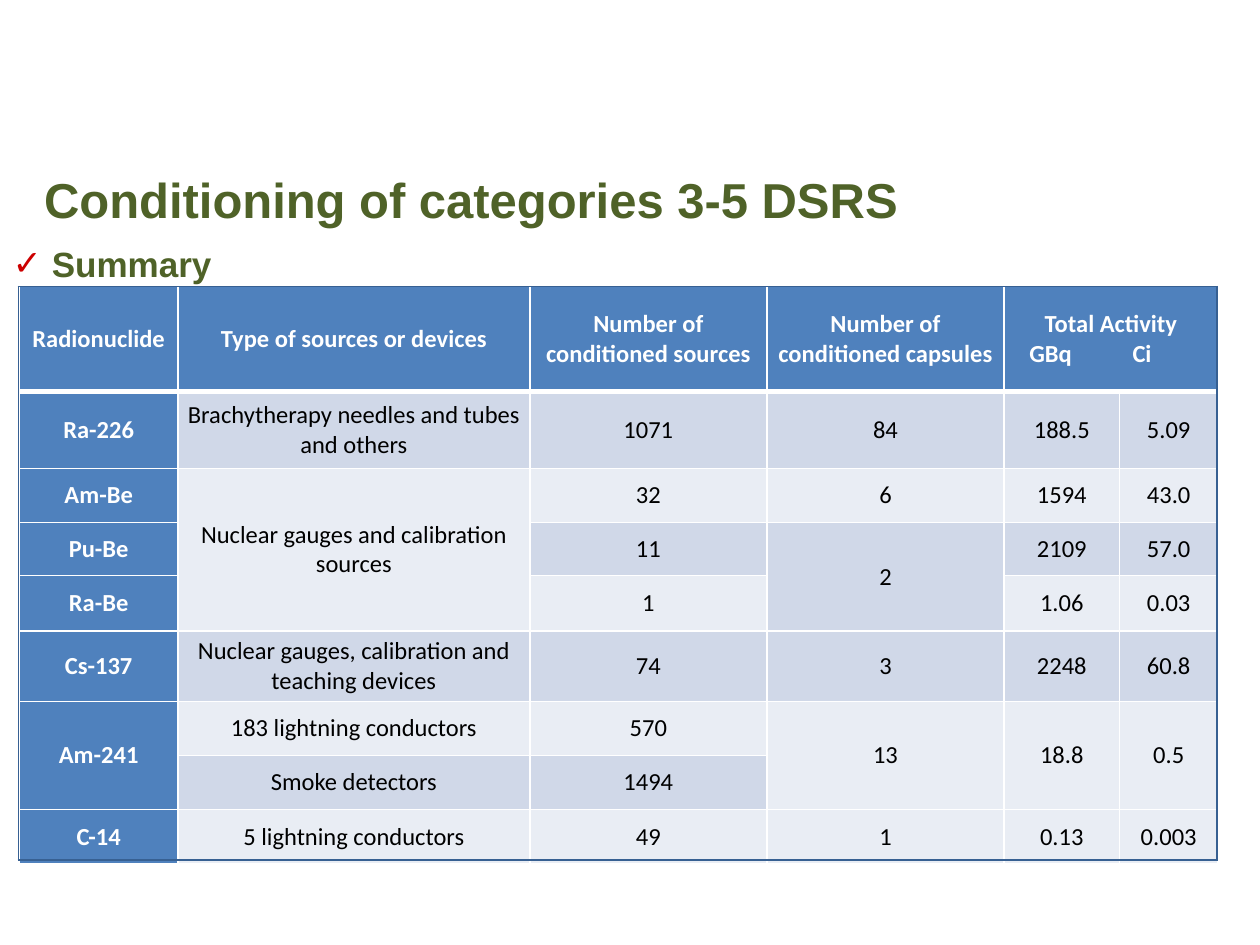
from typing import NamedTuple

from lxml.etree import SubElement
from pptx import Presentation
from pptx.dml.color import RGBColor
from pptx.enum.text import MSO_ANCHOR, MSO_AUTO_SIZE, PP_ALIGN
from pptx.oxml.ns import qn
from pptx.util import Cm, Pt

COLORS = {
    "green": "4F6228", "red": "CC0000", "blue": "4F81BD", "frame": "376092",
    "dark": "D0D8E8", "light": "E9EDF4", "white": "FFFFFF", "black": "000000",
}


class Box(NamedTuple):
    left: float
    top: float
    width: float
    height: float


class Span(NamedTuple):
    row: int
    col: int
    rows: int
    cols: int


TITLE = Box(0.89, 3.41, 18.06, 1.19)
BODY = Box(0, 4.6, 25.4, 1.19)
GRID = Box(0.39, 5.78, 24.16, 11.63)
FRAME = Box(0.37, 5.78, 24.16, 11.56)
COLS = [3.2, 7.09, 4.78, 4.78, 2.33, 1.98]
ROWS = [2.11, 1.55, 1.09, 1.07, 1.12, 1.42, 1.09, 1.09, 1.09]

DATA = [
    ["Radionuclide", "Type of sources or devices", "Number of conditioned sources",
     "Number of conditioned capsules", "Total Activity\nGBq\tCi", None],
    ["Ra-226", "Brachytherapy needles and tubes and others", "1071", "84", "188.5", "5.09"],
    ["Am-Be", "Nuclear gauges and calibration sources", "32", "6", "1594", "43.0"],
    ["Pu-Be", None, "11", "2", "2109", "57.0"],
    ["Ra-Be", None, "1", None, "1.06", "0.03"],
    ["Cs-137", "Nuclear gauges, calibration and teaching devices", "74", "3", "2248", "60.8"],
    ["Am-241", "183 lightning conductors", "570", "13", "18.8", "0.5"],
    [None, "Smoke detectors", "1494", None, None, None],
    ["C-14", "5 lightning conductors", "49", "1", "0.13", "0.003"],
]
SPANS = [Span(0, 4, 1, 2), Span(2, 1, 3, 1), Span(3, 3, 2, 1)]
SPANS += [Span(6, col, 2, 1) for col in (0, 3, 4, 5)]


def rgb(name: str) -> RGBColor:
    return RGBColor.from_string(COLORS[name])


def write(para, text: str, *, size: float, color: str, font: str = "Calibri",
          bold: bool = False, align=PP_ALIGN.CENTER) -> None:
    para.alignment = align
    run = para.add_run()
    run.text = text
    run.font.size = Pt(size)
    run.font.name = font
    run.font.bold = bold
    run.font.color.rgb = rgb(color)


def place(shape, box: Box) -> None:
    shape.left, shape.top, shape.width, shape.height = map(Cm, box)


def bullet(para, char: str, color: str, hang: float) -> None:
    props = para._p.get_or_add_pPr()
    props.set("marL", str(Cm(hang)))
    props.set("indent", str(-Cm(hang)))
    tint = SubElement(props, qn("a:buClr"))
    SubElement(tint, qn("a:srgbClr"), val=COLORS[color])
    SubElement(props, qn("a:buFont"), typeface="Arial")
    SubElement(props, qn("a:buChar"), char=char)


def add_tab(para, pos: float) -> None:
    tabs = SubElement(para._p.get_or_add_pPr(), qn("a:tabLst"))
    SubElement(tabs, qn("a:tab"), pos=str(Cm(pos)), algn="l")


def border(cell, color: str, top: float = 1, bottom: float = 1) -> None:
    """Line all four sides; call before the cell gets its fill."""
    props = cell._tc.get_or_add_tcPr()
    for side, width in zip("LRTB", (1, 1, top, bottom)):
        line = SubElement(props, qn(f"a:ln{side}"), w=str(Pt(width)))
        fill = SubElement(line, qn("a:solidFill"))
        SubElement(fill, qn("a:srgbClr"), val=COLORS[color])


def add_grid(slide, box: Box, rows: list[float], cols: list[float]):
    table = slide.shapes.add_table(len(rows), len(cols), *map(Cm, box)).table
    table.first_row = table.horz_banding = False
    for row, height in zip(table.rows, rows):
        row.height = Cm(height)
    for col, width in zip(table.columns, cols):
        col.width = Cm(width)
    return table


def fill_cell(cell, text: str | None, row: int, col: int) -> None:
    head = row == 0 or col == 0
    border(cell, "white", top=3 if row == 1 else 1, bottom=3 if row == 0 else 1)
    cell.fill.solid()
    cell.fill.fore_color.rgb = rgb("blue" if head else "dark" if row % 2 else "light")
    if text is None:
        return
    units = "\t" in text
    cell.vertical_anchor = MSO_ANCHOR.MIDDLE
    cell.margin_top = cell.margin_bottom = 0
    cell.margin_left = cell.margin_right = Cm(0.51 if units else 0.18)
    frame = cell.text_frame
    for i, line in enumerate(text.split("\n")):
        para = frame.add_paragraph() if i else frame.paragraphs[0]
        if "\t" in line:
            add_tab(para, 2.08)
        write(para, line, size=14, color="white" if head else "black", bold=head,
              align=PP_ALIGN.LEFT if "\t" in line else PP_ALIGN.CENTER)


def add_heads(slide) -> None:
    title, body = slide.shapes.title, slide.placeholders[1]
    place(title, TITLE)
    place(body, BODY)
    for shape in (title, body):
        shape.text_frame.word_wrap = True
        shape.text_frame.auto_size = MSO_AUTO_SIZE.NONE
    frame = title.text_frame
    frame.margin_left = frame.margin_right = frame.margin_top = frame.margin_bottom = 0
    frame.vertical_anchor = MSO_ANCHOR.MIDDLE
    style = dict(font="Arial", color="green", bold=True, align=PP_ALIGN.LEFT)
    write(frame.paragraphs[0], "Conditioning of categories 3-5 DSRS", size=28, **style)
    para = body.text_frame.paragraphs[0]
    para.line_spacing = 1.2
    para.space_before = Pt(0)
    bullet(para, "✓", "red", 0.79)
    write(para, "Summary", size=20, **style)


def main() -> None:
    deck = Presentation()
    deck.slide_width, deck.slide_height = Cm(25.4), Cm(19.05)
    slide = deck.slides.add_slide(deck.slide_layouts[1])
    add_heads(slide)

    table = add_grid(slide, GRID, ROWS, COLS)
    for r, line in enumerate(DATA):
        for c, text in enumerate(line):
            fill_cell(table.cell(r, c), text, r, c)
    for s in SPANS:
        last = table.cell(s.row + s.rows - 1, s.col + s.cols - 1)
        table.cell(s.row, s.col).merge(last)

    frame = add_grid(slide, FRAME, [FRAME.height], [FRAME.width])
    border(frame.cell(0, 0), "frame")
    frame.cell(0, 0).fill.background()
    deck.save("out.pptx")


if __name__ == "__main__":
    main()
